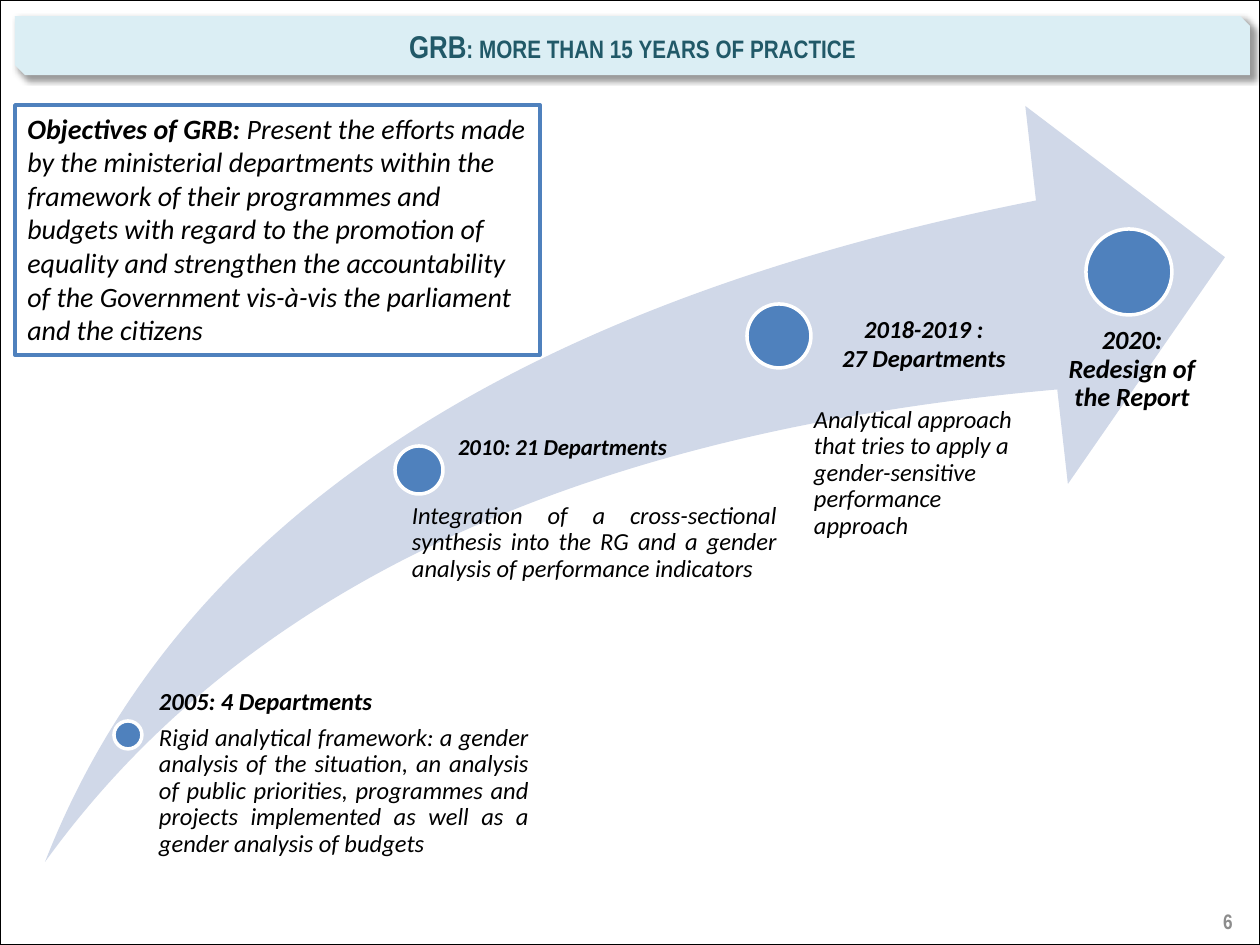
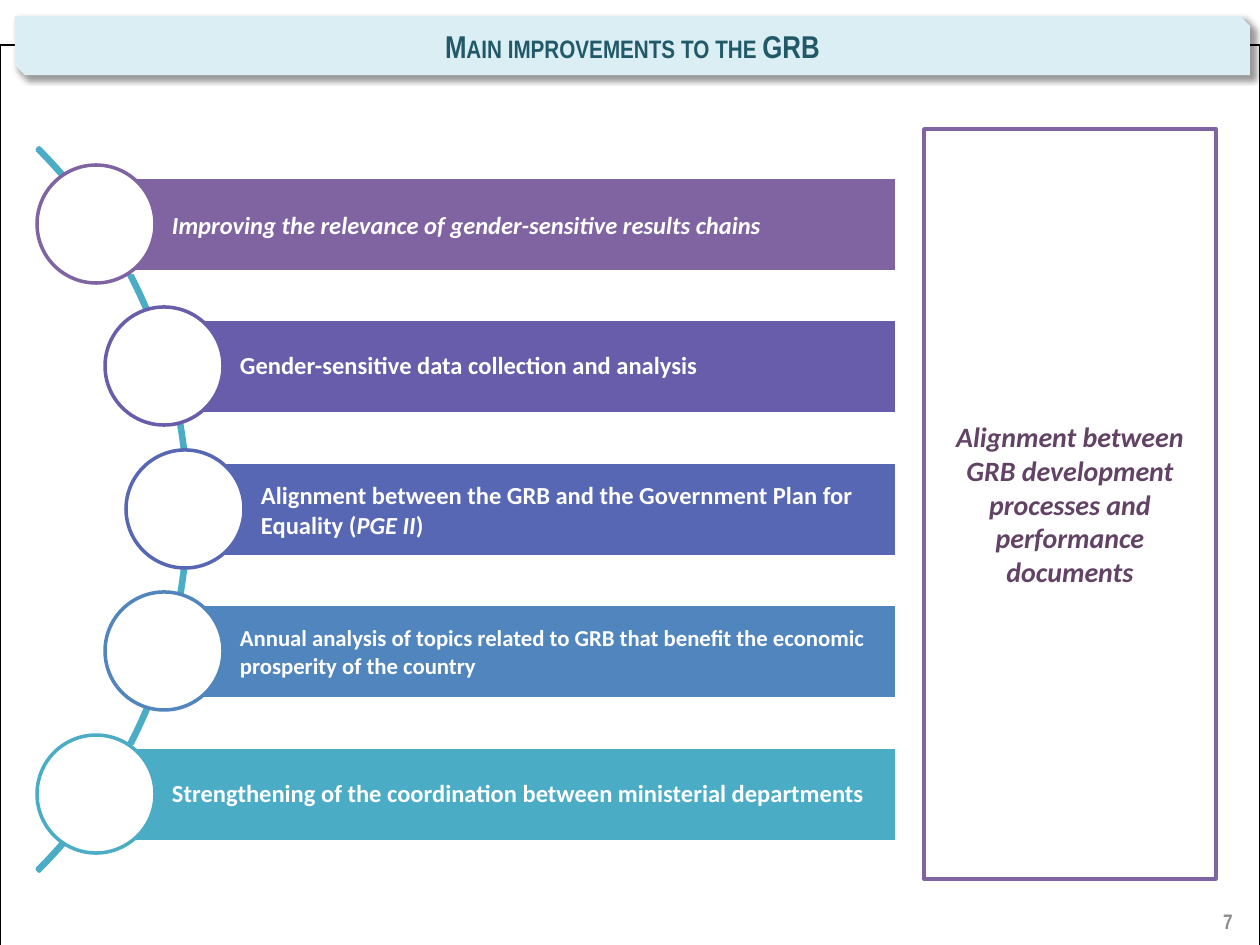
from lxml import etree
from pptx import Presentation
from pptx import util as u
from pptx.dml import color
from pptx.enum import shapes, text
from pptx.oxml import ns

SCALE = 914400 / 126
COLOURS = {
    "black": "000000", "white": "FFFFFF", "band": "DBEEF4", "title": "215968",
    "number": "8C8C8C", "swoosh": "D0D8E8", "blue": "4F81BD", "plum": "634365",
    "purple": "8064A2", "violet": "685DAB", "indigo": "5767B4", "steel": "5185BD",
    "teal": "4BACC6",
}
LEFT, CENTER, RIGHT, JUSTIFY = (
    text.PP_ALIGN.LEFT, text.PP_ALIGN.CENTER, text.PP_ALIGN.RIGHT, text.PP_ALIGN.JUSTIFY)
KIND = shapes.MSO_SHAPE


def draw(slide, kind, box, fill=None, line=None, width=2):
    shape = slide.shapes.add_shape(kind, *[round(n * SCALE) for n in box])
    shape.shadow.inherit = False
    if fill:
        shape.fill.solid()
        shape.fill.fore_color.rgb = color.RGBColor.from_string(COLOURS[fill])
    else:
        shape.fill.background()
    if line:
        shape.line.color.rgb = color.RGBColor.from_string(COLOURS[line])
        shape.line.width = u.Pt(width)
    else:
        shape.line.fill.background()
    return shape


def write(shape, paragraphs, size, ink="black", align=LEFT, font="Calibri", italic=True,
          spacing=1.0, insets=None, anchor=text.MSO_ANCHOR.TOP):
    frame = shape.text_frame
    frame.word_wrap = True
    frame.vertical_anchor = anchor
    if insets:
        frame.margin_left, frame.margin_top, frame.margin_right, frame.margin_bottom = [
            round(n * SCALE) for n in insets]
    for index, runs in enumerate(paragraphs):
        paragraph = frame.paragraphs[0] if index == 0 else frame.add_paragraph()
        paragraph.alignment = align
        paragraph.line_spacing = spacing
        paragraph.font.name = font
        paragraph.font.size = u.Pt(size)
        paragraph.font.italic = italic
        paragraph.font.color.rgb = color.RGBColor.from_string(COLOURS[ink])
        for words, bold in runs:
            run = paragraph.add_run()
            run.text = words
            run.font.bold = bold
    return frame


deck = Presentation()
deck.slide_width, deck.slide_height = u.Inches(10), u.Inches(7.5)
pages = []
for number, title, border_top in [
    ("6", "GRB: more than 15 years of practice", 0),
    ("7", "Main improvements to the GRB", 45),
]:
    page = deck.slides.add_slide(deck.slide_layouts[6])
    draw(page, KIND.RECTANGLE, (0, border_top, 1260, 945), line="black", width=0.75)
    band = draw(page, KIND.SNIP_2_DIAG_RECTANGLE, (15, 16, 1235, 59), "band")
    effects = band._element.spPr.find(ns.qn("a:effectLst"))
    shadow = etree.SubElement(effects, ns.qn("a:outerShdw"), blurRad=str(u.Pt(4)),
                              dist=str(u.Pt(3)), dir="2700000", algn="tl", rotWithShape="0")
    shade = etree.SubElement(shadow, ns.qn("a:srgbClr"), val=COLOURS["black"])
    etree.SubElement(shade, ns.qn("a:alpha"), val="40000")
    heading = write(band, [[(title, True)]], 18, "title", CENTER, "Arial Narrow", False,
                    anchor=text.MSO_ANCHOR.MIDDLE)
    heading.paragraphs[0].runs[0]._r.get_or_add_rPr().set("cap", "small")
    page_number = page.shapes.add_textbox(*[round(n * SCALE) for n in (951, 896, 294, 50)])
    write(page_number, [[(number, True)]], 12, "number", RIGHT, "Arial Narrow", False,
          anchor=text.MSO_ANCHOR.MIDDLE)
    pages.append(page)
history, improvements = pages

swoosh = draw(history, KIND.SWOOSH_ARROW, (45, 106, 1180, 756), "swoosh")
swoosh.adjustments[0] = 0.25
swoosh.adjustments[1] = 0.25
for left, top, diameter in [(114, 721, 28), (395, 446, 48), (747, 304, 64), (1086, 229, 86)]:
    draw(history, KIND.OVAL, (left, top, diameter, diameter), "blue", "white")

for box, lines, size, bold, align, spacing in [
    ((159, 689, 370, 30), ["2005: 4 Departments"], 14, True, LEFT, 0.9),
    ((159, 725, 370, 140), ["Rigid analytical framework: a gender analysis of the situation, an analysis "
     "of public priorities, programmes and projects implemented as well as a gender analysis of budgets"],
     14, False, JUSTIFY, 0.9),
    ((458, 436, 320, 28), ["2010: 21 Departments"], 13, True, LEFT, 0.9),
    ((412, 503, 365, 85), ["Integration of a cross-sectional synthesis into the RG and a gender analysis "
     "of performance indicators"], 14, False, JUSTIFY, 0.9),
    ((814, 314, 220, 62), ["2018-2019 :", "27 Departments"], 14, True, CENTER, 1.0),
    ((814, 407, 215, 135), ["Analytical approach that tries to apply a gender-sensitive performance approach"],
     14, False, LEFT, 0.9),
    ((1062, 327, 140, 90), ["2020: Redesign of the Report"], 15, True, CENTER, 0.9),
]:
    milestone = history.shapes.add_textbox(*[round(n * SCALE) for n in box])
    write(milestone, [[(line, bold)] for line in lines], size, align=align, spacing=spacing,
          insets=(0, 0, 0, 0))

objectives = draw(history, KIND.RECTANGLE, (15, 105, 525, 250), "white", "blue")
write(objectives, [[
    ("Objectives of GRB: ", True),
    ("Present the efforts made by the ministerial departments within the framework of their "
     "programmes and budgets with regard to the promotion of equality and strengthen the "
     "accountability of the Government vis-à-vis the parliament and the citizens", False),
]], 16)

arc = draw(improvements, KIND.BLOCK_ARC, (-834, -2, 1023, 1023), line="teal")
for index, angle in enumerate((189, 27, 0.003)):
    arc.adjustments[index] = angle

for row, (left, tint, words, size, italic, spacing) in enumerate([
    (96, "purple", ["Improving the relevance of gender-sensitive results chains"], 14, True, 1.0),
    (164, "violet", ["Gender-sensitive data collection and analysis"], 14, False, 0.9),
    (185, "indigo", ["Alignment between the GRB and the Government Plan for Equality (", "PGE II", ")"],
     14, False, 1.0),
    (164, "steel", ["Annual analysis of topics related to GRB that benefit the economic prosperity "
     "of the country"], 13, False, 1.0),
    (96, "teal", ["Strengthening of the coordination between ministerial departments"], 14, False, 0.9),
]):
    top = 177 + 570 * row // 4
    bar = draw(improvements, KIND.RECTANGLE, (left, top, 897 - left, 95), tint, "white")
    label = write(bar, [[(part, True) for part in words]], size, "white", italic=italic,
                  spacing=spacing, insets=(76, 5, 5, 5), anchor=text.MSO_ANCHOR.MIDDLE)
    for plan in label.paragraphs[0].runs[1:2]:
        plan.font.italic = True
    draw(improvements, KIND.OVAL, (left - 59, top - 12, 118, 118), "white", tint)

alignment = draw(improvements, KIND.RECTANGLE, (924, 129, 292, 750), "white", "purple")
write(alignment, [[("Alignment between GRB development processes and performance documents", True)]],
      16, "plum", CENTER, anchor=text.MSO_ANCHOR.MIDDLE)

deck.save("out.pptx")
